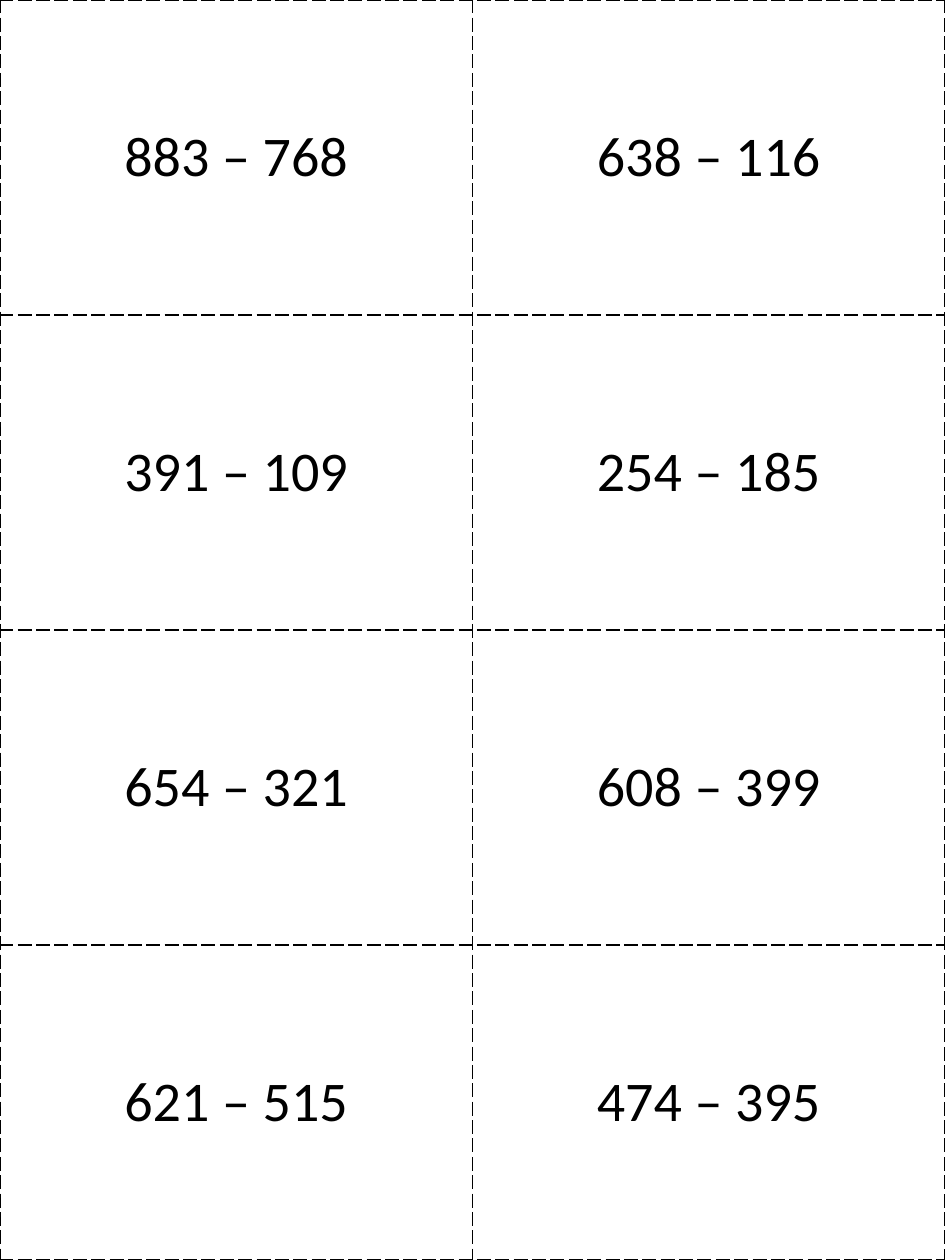
from lxml import etree
from pptx import Presentation
from pptx.dml.color import RGBColor
from pptx.enum.text import MSO_ANCHOR, PP_ALIGN
from pptx.oxml.ns import qn
from pptx.util import Inches, Pt

MIDDLE = MSO_ANCHOR.MIDDLE
CENTER = PP_ALIGN.CENTER

COLORS = {"ink": "000000", "paper": "FFFFFF"}
PAGE_WIDTH, PAGE_HEIGHT = 7.5, 10
BLANK_LAYOUT = 6
PROBLEM_FONT = {"name": "Calibri", "size": Pt(32), "bold": False}
CUT_LINE_WIDTH = Pt(1)

PROBLEMS = [
    ("883 – 768", "638 – 116"),
    ("391 – 109", "254 – 185"),
    ("654 – 321", "608 – 399"),
    ("621 – 515", "474 – 395"),
]


def add_cut_lines(card):
    """Draw a dashed line on all four sides of a card."""
    properties = card._tc.get_or_add_tcPr()
    # Borders come before the fill in the cell properties
    for position, side in enumerate(("lnL", "lnR", "lnT", "lnB")):
        line = etree.Element(qn(f"a:{side}"), w=str(CUT_LINE_WIDTH))
        fill = etree.SubElement(line, qn("a:solidFill"))
        etree.SubElement(fill, qn("a:srgbClr"), val=COLORS["ink"])
        etree.SubElement(line, qn("a:prstDash"), val="lgDash")
        properties.insert(position, line)


def fill_card(card, problem):
    """Write one subtraction problem in the middle of a card."""
    card.fill.background()
    card.vertical_anchor = MIDDLE
    paragraph = card.text_frame.paragraphs[0]
    paragraph.alignment = CENTER
    run = paragraph.add_run()
    run.text = problem
    for attribute, value in PROBLEM_FONT.items():
        setattr(run.font, attribute, value)
    run.font.color.rgb = RGBColor.from_string(COLORS["ink"])
    add_cut_lines(card)


def add_card_grid(slide, problems):
    """Divide the whole page into equal cards."""
    row_count, column_count = len(problems), len(problems[0])
    grid = slide.shapes.add_table(
        row_count, column_count, 0, 0, Inches(PAGE_WIDTH), Inches(PAGE_HEIGHT)
    ).table
    grid.first_row = False
    grid.horz_banding = False
    for row, row_problems in enumerate(problems):
        for column, problem in enumerate(row_problems):
            fill_card(grid.cell(row, column), problem)


def main():
    presentation = Presentation()
    presentation.slide_width = Inches(PAGE_WIDTH)
    presentation.slide_height = Inches(PAGE_HEIGHT)
    slide = presentation.slides.add_slide(presentation.slide_layouts[BLANK_LAYOUT])

    # Page background
    background = slide.background.fill
    background.solid()
    background.fore_color.rgb = RGBColor.from_string(COLORS["paper"])

    # Subtraction cards
    add_card_grid(slide, PROBLEMS)
    presentation.save("out.pptx")


if __name__ == "__main__":
    main()
